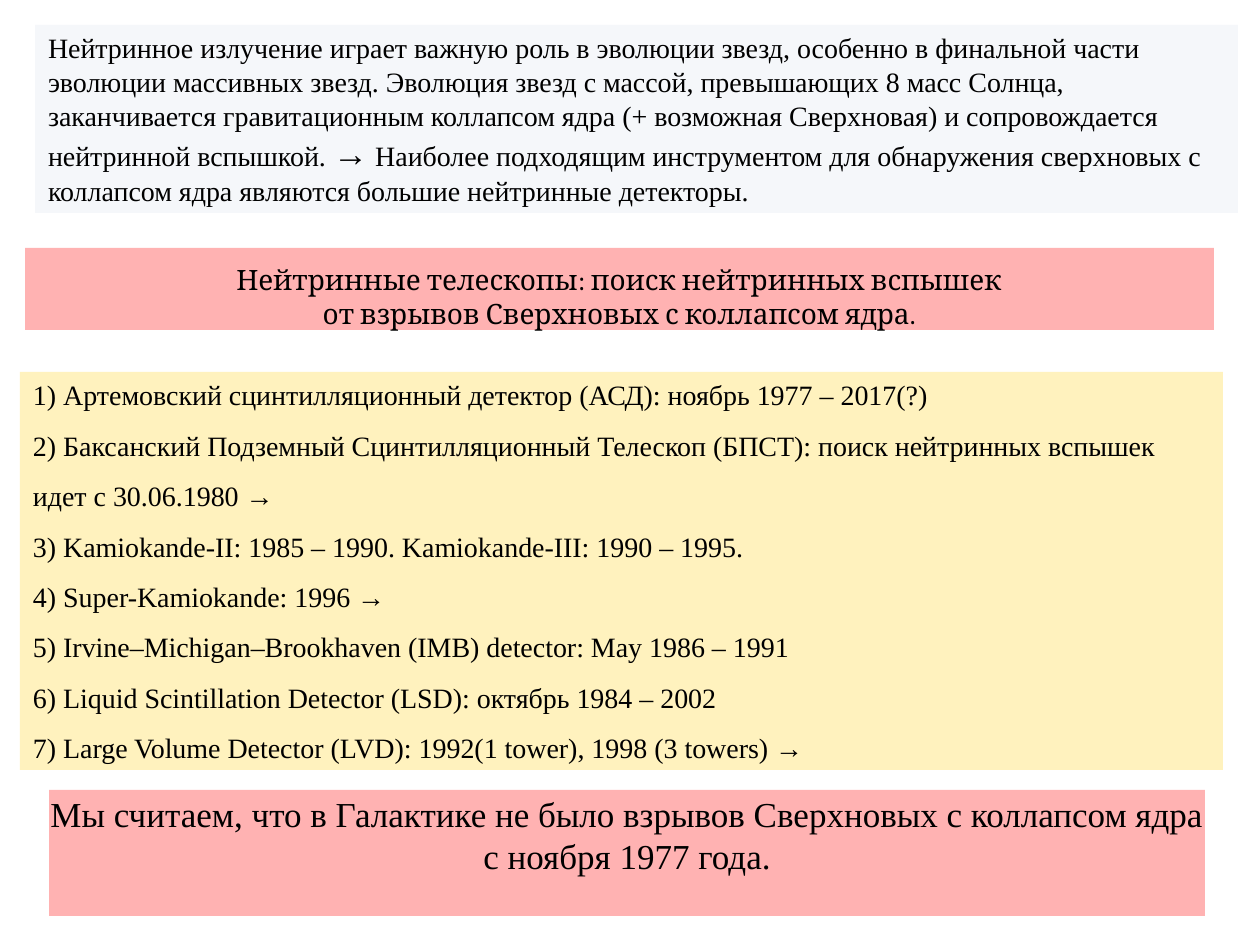
import lxml.etree
import pptx
import pptx.dml.color
import pptx.enum.text
import pptx.oxml.ns
import pptx.util

EMU_PER_PX = 914400 / 126
ANCHOR = pptx.enum.text.MSO_ANCHOR
ALIGN = pptx.enum.text.PP_ALIGN

THEME = {
    "text": "000000",
    "intro": "DEE6EF",
    "highlight": "FF0000",
    "detectors": "FFD428",
    "alpha": "30000",
    "body_font": "Times New Roman",
    "title_font": "Cambria",
    "body_size": 16,
    "large_size": 20,
}
BODY, LARGE = THEME["body_size"], THEME["large_size"]


def px(length):
    return pptx.util.Emu(round(length * EMU_PER_PX))


def fill_panel(panel, place, color, paragraphs, frame_format, align, font_name):
    """Place a tinted panel and write paragraphs, each a list of (text, size) runs."""
    for side, length in zip(("left", "top", "width", "height"), place):
        setattr(panel, side, px(length))
    panel.fill.solid()
    panel.fill.fore_color.rgb = pptx.dml.color.RGBColor.from_string(color)
    tint = panel._element.spPr.find(".//" + pptx.oxml.ns.qn("a:srgbClr"))
    lxml.etree.SubElement(tint, pptx.oxml.ns.qn("a:alpha"), val=THEME["alpha"])

    frame = panel.text_frame
    for name, value in frame_format.items():
        setattr(frame, name, value)
    for index, runs in enumerate(paragraphs):
        paragraph = frame.paragraphs[0] if index == 0 else frame.add_paragraph()
        paragraph.alignment = align
        paragraph.space_before = pptx.util.Pt(0)
        for text, size in runs:
            run = paragraph.add_run()
            run.text = text
            run.font.name = font_name
            run.font.size = pptx.util.Pt(size)
            run.font.color.rgb = pptx.dml.color.RGBColor.from_string(THEME["text"])


base_format = {"word_wrap": True, "auto_size": pptx.enum.text.MSO_AUTO_SIZE.NONE}
padded_format = base_format | {
    "vertical_anchor": ANCHOR.TOP,
    "margin_left": px(13), "margin_right": px(13),
    "margin_top": px(6), "margin_bottom": px(6),
}
tight_format = base_format | {
    "margin_left": 0, "margin_right": 0, "margin_top": 0, "margin_bottom": 0,
}

presentation = pptx.Presentation()
presentation.slide_width = px(1260)
presentation.slide_height = px(945)
slide = presentation.slides.add_slide(presentation.slide_layouts[1])

# Introduction
intro_paragraphs = [
    [
        ("Нейтринное излучение играет важную роль в эволюции звезд, особенно в "
         "финальной части эволюции массивных звезд. Эволюция звезд с массой, "
         "превышающих 8 масс Солнца, заканчивается гравитационным коллапсом ядра "
         "(+ возможная Сверхновая) и сопровождается нейтринной вспышкой. ", BODY),
        ("→", LARGE),
        (" Наиболее подходящим инструментом для обнаружения сверхновых с", BODY),
    ],
    [("коллапсом ядра являются большие нейтринные детекторы.", BODY)],
]
intro = slide.shapes.add_textbox(0, 0, 0, 0)
fill_panel(intro, (35, 25, 1203, 188), THEME["intro"], intro_paragraphs,
           padded_format, ALIGN.LEFT, THEME["body_font"])

# Title
title_paragraphs = [
    [("Нейтринные телескопы: поиск нейтринных вспышек", BODY)],
    [("от взрывов Сверхновых с коллапсом ядра.", BODY)],
]
fill_panel(slide.shapes.title, (25, 248, 1189, 82), THEME["highlight"], title_paragraphs,
           tight_format | {"vertical_anchor": ANCHOR.BOTTOM}, ALIGN.CENTER,
           THEME["title_font"])

# Detectors
detector_lines = [
    "1) Артемовский сцинтилляционный детектор (АСД): ноябрь 1977 – 2017(?)",
    "2) Баксанский Подземный Сцинтилляционный Телескоп (БПСТ): "
    "поиск нейтринных вспышек идет с 30.06.1980 →",
    "3) Kamiokande-II: 1985 – 1990. Kamiokande-III: 1990 – 1995.",
    "4) Super-Kamiokande: 1996 →",
    "5) Irvine–Michigan–Brookhaven (IMB) detector: May 1986 – 1991",
    "6) Liquid Scintillation Detector (LSD): октябрь 1984 – 2002",
    "7) Large Volume Detector (LVD): 1992(1 tower), 1998 (3 towers) →",
]
detectors = slide.placeholders[1]
fill_panel(detectors, (20, 372, 1203, 398), THEME["detectors"],
           [[(line, BODY)] for line in detector_lines],
           padded_format, ALIGN.LEFT, THEME["body_font"])
for index, paragraph in enumerate(detectors.text_frame.paragraphs):
    paragraph.line_spacing = 1.5 if index else 1.0
    properties = paragraph._p.get_or_add_pPr()
    for name in ("marL", "indent"):
        properties.set(name, "0")
    lxml.etree.SubElement(properties, pptx.oxml.ns.qn("a:buNone"))

# Conclusion
conclusion = slide.shapes.add_textbox(0, 0, 0, 0)
fill_panel(conclusion, (49, 790, 1156, 126), THEME["highlight"],
           [[("Мы считаем, что в Галактике не было взрывов Сверхновых с коллапсом ядра "
              "с ноября 1977 года.", LARGE)]],
           tight_format | {"vertical_anchor": ANCHOR.TOP, "margin_top": px(3)},
           ALIGN.CENTER, THEME["body_font"])

presentation.save("out.pptx")
